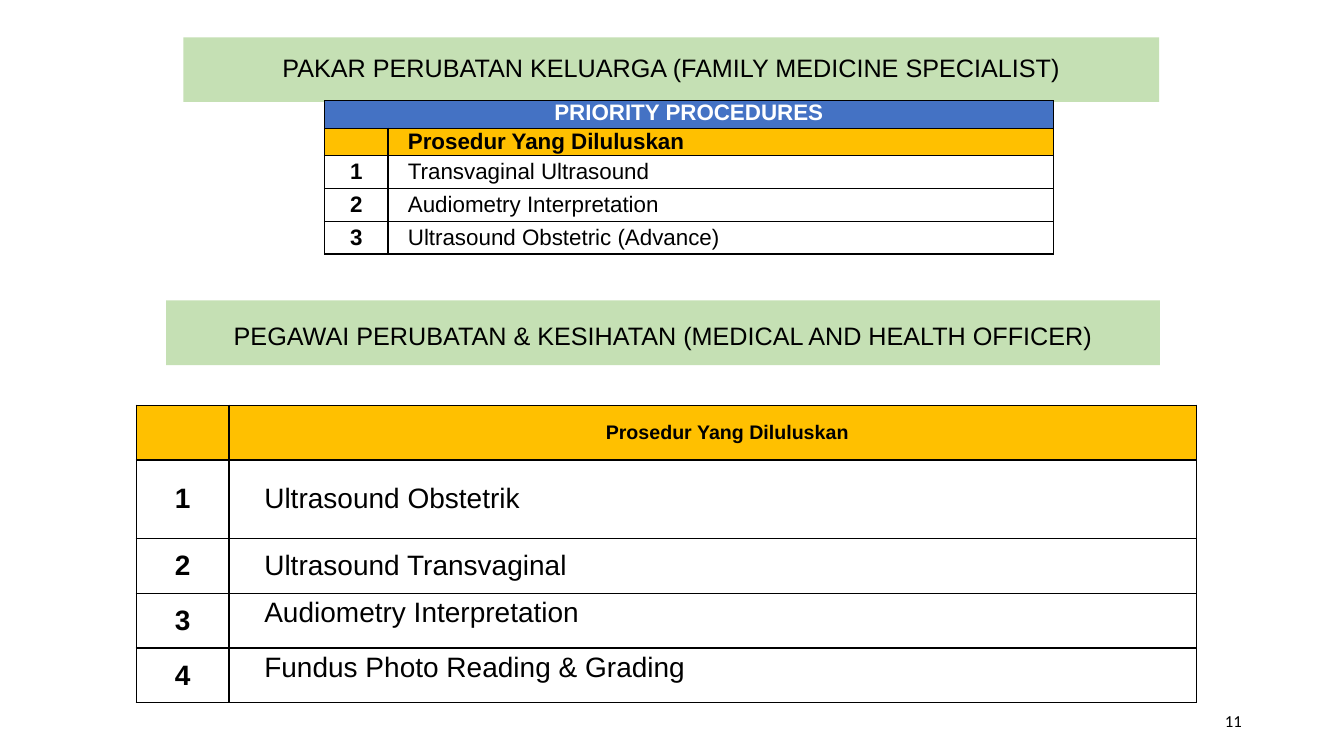
from lxml import etree
from pptx import Presentation, util as u
from pptx.dml import color
from pptx.enum import text
from pptx.oxml import ns

BLACK, WHITE, GREEN, BLUE, AMBER = "000000", "FFFFFF", "C5E0B4", "4472C4", "FFC000"
LEFT, CENTER, RIGHT = text.PP_ALIGN.LEFT, text.PP_ALIGN.CENTER, text.PP_ALIGN.RIGHT
TOP, MIDDLE = text.MSO_ANCHOR.TOP, text.MSO_ANCHOR.MIDDLE


def paint(color_format, value):
    color_format.rgb = color.RGBColor.from_string(value)


def fill_with(target, value):
    target.fill.solid()
    paint(target.fill.fore_color, value)


def write(text_frame, wording, size, align, spacing=0, bold=False, ink=BLACK, font="Arial"):
    text_frame.text = wording
    paragraph = text_frame.paragraphs[0]
    paragraph.alignment = align
    paragraph.space_before = paragraph.space_after = u.Pt(spacing)
    for run in paragraph.runs:
        run.font.size, run.font.name, run.font.bold = u.Pt(size), font, bold
        paint(run.font.color, ink)
    if not wording:
        ending = etree.SubElement(paragraph._p, ns.qn("a:endParaRPr"))
        ending.set("sz", str(size * 100))
    return paragraph


def add_borders(cell):
    properties = cell._tc.get_or_add_tcPr()
    for position, side in enumerate(("lnL", "lnR", "lnT", "lnB")):
        line = etree.Element(ns.qn(f"a:{side}"), w=str(u.Pt(1)))
        solid = etree.SubElement(line, ns.qn("a:solidFill"))
        etree.SubElement(solid, ns.qn("a:srgbClr"), val=BLACK)
        properties.insert(position, line)


def format_cell(cell, wording, size, align, fill, side, vertical, anchor=MIDDLE, bold=False, ink=BLACK):
    write(cell.text_frame, wording, size, align, 6, bold, ink)
    cell.margin_left, cell.margin_right = (u.Cm(margin) for margin in side)
    cell.margin_top = cell.margin_bottom = u.Cm(vertical)
    cell.vertical_anchor = anchor
    fill_with(cell, fill)
    add_borders(cell)


def add_grid(slide, left, top, widths, heights):
    frame = slide.shapes.add_table(len(heights), len(widths), u.Cm(left), u.Cm(top),
                                   u.Cm(sum(widths)), u.Cm(sum(heights)))
    for column, width in zip(frame.table.columns, widths):
        column.width = u.Cm(width)
    for row, height in zip(frame.table.rows, heights):
        row.height = u.Cm(height)
    return frame.table


def format_banner(shape, box, wording, spacing, line_spacing):
    shape.left, shape.top, shape.width, shape.height = (u.Cm(length) for length in box)
    fill_with(shape, GREEN)
    shape.text_frame.word_wrap = True
    shape.text_frame.auto_size = text.MSO_AUTO_SIZE.NONE
    shape.text_frame.vertical_anchor = MIDDLE
    write(shape.text_frame, wording, 18, CENTER, spacing).line_spacing = line_spacing


def add_specialist_table(slide, left, top):
    procedures = ["Transvaginal Ultrasound", "Audiometry Interpretation", "Ultrasound Obstetric (Advance)"]
    table = add_grid(slide, left, top, [1.6, 16.76], [0.69] * 2 + [0.76] * len(procedures))
    narrow, indented = (0.18, 0.18), (0.5, 0.18)
    table.cell(0, 0).merge(table.cell(0, 1))
    for column, wording in enumerate(["PRIORITY PROCEDURES", ""]):
        format_cell(table.cell(0, column), wording, 16, CENTER, BLUE, narrow, 0, TOP, True, WHITE)
    format_cell(table.cell(1, 0), "", 12, CENTER, AMBER, narrow, 0)
    format_cell(table.cell(1, 1), "Prosedur Yang Diluluskan", 16, LEFT, AMBER, indented, 0, bold=True)
    for number, procedure in enumerate(procedures, 1):
        format_cell(table.cell(number + 1, 0), str(number), 16, CENTER, WHITE, narrow, 0.1, bold=True)
        format_cell(table.cell(number + 1, 1), procedure, 16, LEFT, WHITE, indented, 0.1)


def add_officer_table(slide, left, top):
    procedures = [("Ultrasound Obstetrik", MIDDLE), ("Ultrasound Transvaginal", MIDDLE),
                  ("Audiometry Interpretation", TOP), ("Fundus Photo Reading & Grading", TOP)]
    table = add_grid(slide, left, top, [2.34, 24.38], [1.38, 1.98] + [1.38] * 3)
    narrow, indented = (0.15, 0.15), (0.89, 0.15)
    format_cell(table.cell(0, 0), "", 14, CENTER, AMBER, narrow, 0)
    format_cell(table.cell(0, 1), "Prosedur Yang Diluluskan", 14, CENTER, AMBER, indented, 0.1, bold=True)
    for number, (procedure, anchor) in enumerate(procedures, 1):
        format_cell(table.cell(number, 0), str(number), 20, CENTER, WHITE, narrow, 0, bold=True)
        format_cell(table.cell(number, 1), procedure, 20, LEFT, WHITE, indented, 0.1, anchor)


def add_page_number(slide, left, top, width, height):
    shape = slide.shapes.add_textbox(u.Cm(left), u.Cm(top), u.Cm(width), u.Cm(height))
    shape.text_frame.word_wrap = True
    shape.text_frame.vertical_anchor = MIDDLE
    write(shape.text_frame, "11", 12, RIGHT, font="Calibri")


def main():
    presentation = Presentation()
    presentation.slide_width, presentation.slide_height = u.Cm(33.87), u.Cm(19.05)
    slide = presentation.slides.add_slide(presentation.slide_layouts[5])
    format_banner(slide.shapes.title, (4.62, 0.94, 24.59, 1.63),
                  "PAKAR PERUBATAN KELUARGA (FAMILY MEDICINE SPECIALIST)", 6, 0.9)
    add_specialist_table(slide, 8.18, 2.54)
    officer_banner = slide.shapes.add_textbox(0, 0, 0, 0)
    format_banner(officer_banner, (4.19, 7.57, 25.04, 1.63),
                  "PEGAWAI PERUBATAN & KESIHATAN (MEDICAL AND HEALTH OFFICER)", 3, 1.15)
    add_officer_table(slide, 3.43, 10.21)
    add_page_number(slide, 23.93, 17.65, 7.62, 1.02)
    presentation.save("out.pptx")


if __name__ == "__main__":
    main()
